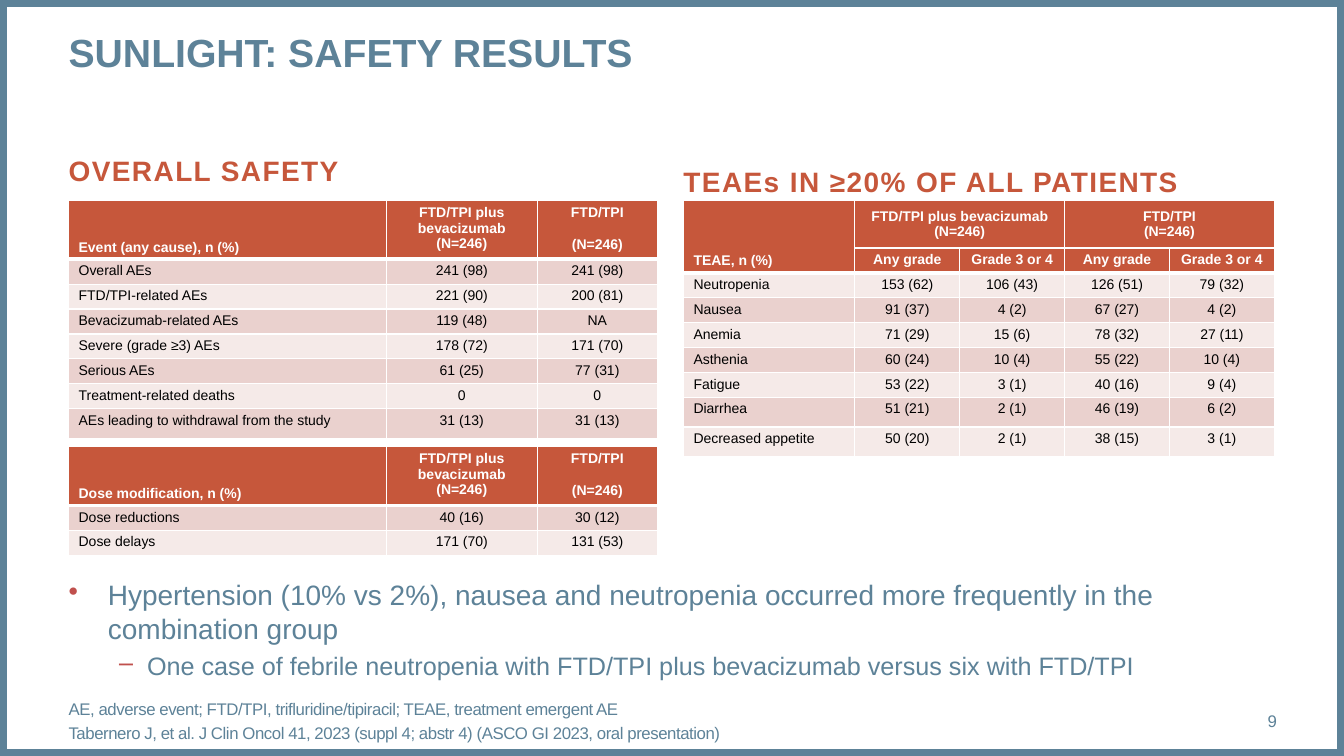
from lxml import etree
from pptx import Presentation
from pptx.dml.color import RGBColor
from pptx.enum.shapes import MSO_SHAPE
from pptx.enum.text import MSO_ANCHOR, MSO_AUTO_SIZE, PP_ALIGN
from pptx.oxml.ns import qn
from pptx.util import Pt

RECTANGLE = MSO_SHAPE.RECTANGLE
TOP, MIDDLE, BOTTOM = MSO_ANCHOR.TOP, MSO_ANCHOR.MIDDLE, MSO_ANCHOR.BOTTOM
LEFT, CENTER, RIGHT = PP_ALIGN.LEFT, PP_ALIGN.CENTER, PP_ALIGN.RIGHT
NO_FIT = MSO_AUTO_SIZE.NONE
BLUE, RUST, BULLET_RED, WHITE, BLACK = "5D8298", "C6573B", "C0504D", "FFFFFF", "000000"
BANDS = ["F5EAE8", "EAD1CE"]
LEFT_X, RIGHT_X, TABLE_Y = 49, 488.2, 143.4
HEAD_HEIGHT, ROW_HEIGHT, TALL_HEIGHT = 41, 17.75, 21.3


def color(hex_string):
    return RGBColor.from_string(hex_string)


def write(frame, text, size, hex_string, bold=False, align=LEFT, anchor=TOP,
          insets=(0, 0, 0, 0), tracking=0, before=0):
    """Fill a text frame or table cell, one paragraph per line of text."""
    sides = ("margin_left", "margin_top", "margin_right", "margin_bottom")
    for side, inset in zip(sides, insets):
        setattr(frame, side, Pt(inset))
    frame.vertical_anchor = anchor
    text_frame = getattr(frame, "text_frame", frame)
    text_frame.text = text
    for para in text_frame.paragraphs:
        para.alignment = align
        para.space_before = Pt(before)
        for span in para.runs:
            for name, value in {"size": Pt(size), "name": "Arial", "bold": bold}.items():
                setattr(span.font, name, value)
            span.font.color.rgb = color(hex_string)
            if tracking:
                span.font._element.set("spc", str(round(tracking * 100)))


deck = Presentation()
deck.slide_width, deck.slide_height = Pt(960), Pt(540)
page = deck.slides.add_slide(deck.slide_layouts[5])

border = page.shapes.add_shape(RECTANGLE, 0, 0, Pt(960), Pt(540))
border.shadow.inherit = False
border.fill.background()
border.line.color.rgb = color(BLUE)
border.line.width = Pt(10)

title = page.shapes.title
title_place = {"left": Pt(LEFT_X), "top": Pt(20), "width": Pt(688), "height": Pt(68)}
for name, value in title_place.items():
    setattr(title, name, value)
write(title.text_frame, "SUNLIGHT: SAFETY RESULTS", 28, BLUE, bold=True)
title.text_frame.auto_size = NO_FIT

heading = {"size": 20, "hex_string": RUST, "bold": True, "tracking": 1,
           "insets": (0, 3.6, 7.2, 3.6)}
note = {"size": 12, "hex_string": BLUE, "anchor": MIDDLE}
text_boxes = [
    (LEFT_X, 105.8, 203, 31.7, "OVERALL SAFETY", heading),
    (RIGHT_X, 113.8, 364.3, 31.7, "TEAEs IN ≥20% OF ALL PATIENTS", heading),
    (LEFT_X, 500.4, 801.4, 28.8,
     "AE, adverse event; FTD/TPI, trifluridine/tipiracil; TEAE, treatment emergent AE\n"
     "Tabernero J, et al. J Clin Oncol 41, 2023 (suppl 4; abstr 4) "
     "(ASCO GI 2023, oral presentation)", {**note, "tracking": -0.3, "before": 3}),
    (828, 500.4, 84.2, 28.8, "9", {**note, "align": RIGHT}),
]
for x, y, width, height, text, text_format in text_boxes:
    box = page.shapes.add_textbox(Pt(x), Pt(y), Pt(width), Pt(height))
    write(box.text_frame, text, **text_format)
    box.text_frame.word_wrap = text_format is not heading

summary = page.shapes.add_textbox(Pt(LEFT_X), Pt(412.6), Pt(863.3), Pt(79.2)).text_frame
summary.word_wrap = True
write(summary,
      "Hypertension (10% vs 2%), nausea and neutropenia occurred more frequently "
      "in the combination group\n"
      "One case of febrile neutropenia with FTD/TPI plus bevacizumab versus six with FTD/TPI",
      20, BLUE)
bullets = [("•", 0, 20, 12, 28, -28), ("–", 1, 18, 4, 56, -20)]
for para, (mark, level, size, before, margin, indent) in zip(summary.paragraphs, bullets):
    para.level = level
    para.space_before = Pt(before)
    para.runs[0].font.size = Pt(size)
    properties = para._p.get_or_add_pPr()
    properties.set("marL", str(Pt(margin)))
    properties.set("indent", str(Pt(indent)))
    bullet_color = etree.SubElement(properties, qn("a:buClr"))
    etree.SubElement(bullet_color, qn("a:srgbClr"), val=BULLET_RED)
    etree.SubElement(properties, qn("a:buChar"), char=mark)

COMBINATION, SINGLE = "FTD/TPI plus bevacizumab\n(N=246)", "FTD/TPI\n(N=246)"
safety_rows = [
    ["Event (any cause), n (%)", COMBINATION, SINGLE],
    ["Overall AEs", "241 (98)", "241 (98)"],
    ["FTD/TPI-related AEs", "221 (90)", "200 (81)"],
    ["Bevacizumab-related AEs", "119 (48)", "NA"],
    ["Severe (grade ≥3) AEs", "178 (72)", "171 (70)"],
    ["Serious AEs", "61 (25)", "77 (31)"],
    ["Treatment-related deaths", "0", "0"],
    ["AEs leading to withdrawal from the study", "31 (13)", "31 (13)"],
]
dose_rows = [
    ["Dose modification, n (%)", COMBINATION, SINGLE],
    ["Dose reductions", "40 (16)", "30 (12)"],
    ["Dose delays", "171 (70)", "131 (53)"],
]
teae_rows = [
    ["TEAE, n (%)", COMBINATION, "", SINGLE, ""],
    ["", "Any grade", "Grade 3 or 4", "Any grade", "Grade 3 or 4"],
    ["Neutropenia", "153 (62)", "106 (43)", "126 (51)", "79 (32)"],
    ["Nausea", "91 (37)", "4 (2)", "67 (27)", "4 (2)"],
    ["Anemia", "71 (29)", "15 (6)", "78 (32)", "27 (11)"],
    ["Asthenia", "60 (24)", "10 (4)", "55 (22)", "10 (4)"],
    ["Fatigue", "53 (22)", "3 (1)", "40 (16)", "9 (4)"],
    ["Diarrhea", "51 (21)", "2 (1)", "46 (19)", "6 (2)"],
    ["Decreased appetite", "50 (20)", "2 (1)", "38 (15)", "3 (1)"],
]
wide_columns, grade_columns = [226.8, 108, 85.7], [122.4] + [74.9] * 4
tables = [
    (LEFT_X, TABLE_Y, wide_columns, safety_rows, 1,
     [HEAD_HEIGHT] + [ROW_HEIGHT] * 6 + [TALL_HEIGHT]),
    (LEFT_X, 319.2, wide_columns, dose_rows, 1, [HEAD_HEIGHT] + [ROW_HEIGHT] * 2),
    (RIGHT_X, TABLE_Y, grade_columns, teae_rows, 2,
     [33.75] + [ROW_HEIGHT] * 6 + [TALL_HEIGHT] * 2),
]
for x, y, columns, rows, head_count, heights in tables:
    table = page.shapes.add_table(len(rows), len(columns), Pt(x), Pt(y),
                                  Pt(sum(columns)), Pt(sum(heights))).table
    for column, width in zip(table.columns, columns):
        column.width = Pt(width)
    for row, height in zip(table.rows, heights):
        row.height = Pt(height)
    for i, row in enumerate(rows):
        is_head = i < head_count
        for j, text in enumerate(row):
            cell = table.cell(i, j)
            anchor = TOP
            if is_head and j == 0:
                anchor = BOTTOM
            elif head_count == 2 and i == 0:
                anchor = MIDDLE
            write(cell, text, 10, WHITE if is_head else BLACK, bold=is_head,
                  align=CENTER if j else LEFT, anchor=anchor, insets=(7.2, 2.88, 7.2, 2.88))
            thick_bottom = i == head_count - 1 or (is_head and j == 0)
            edges = {"a:lnL": 1, "a:lnR": 1, "a:lnT": 3 if i == head_count else 1,
                     "a:lnB": 3 if thick_bottom else 1}
            for edge, width in edges.items():
                line = etree.SubElement(cell._tc.get_or_add_tcPr(), qn(edge), w=str(Pt(width)))
                line_fill = etree.SubElement(line, qn("a:solidFill"))
                etree.SubElement(line_fill, qn("a:srgbClr"), val=WHITE)
            cell.fill.solid()
            cell.fill.fore_color.rgb = color(RUST if is_head else BANDS[i % 2])
    if head_count == 1:
        table.cell(0, 2).text_frame.paragraphs[1].space_before = Pt(11.5)
    else:
        for first, last in [((0, 0), (1, 0)), ((0, 1), (0, 2)), ((0, 3), (0, 4))]:
            table.cell(*first).merge(table.cell(*last))

deck.save("out.pptx")
